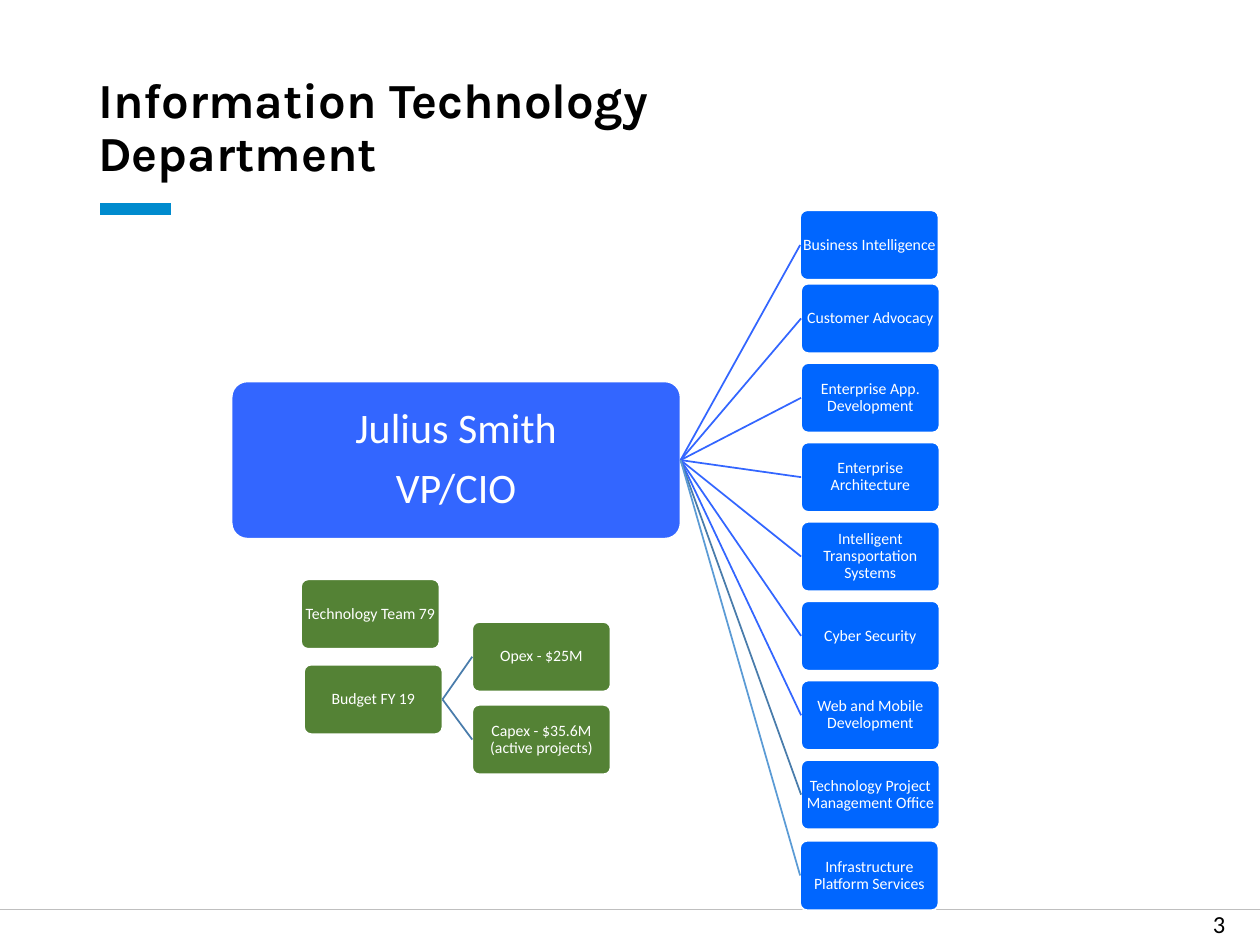
from lxml.etree import SubElement
from pptx import Presentation
from pptx.dml.color import RGBColor
from pptx.enum.shapes import MSO_CONNECTOR, MSO_SHAPE
from pptx.enum.text import MSO_ANCHOR, PP_ALIGN
from pptx.oxml.ns import qn
from pptx.util import Cm, Pt

WHITE = "FFFFFF"
BLACK = "000000"
ROYAL = "3366FF"
BLUE = "0066FF"
GREEN = "548235"
STEEL = "497CAB"
SKY = "5B9BD5"

TOP, LEFT, RIGHT = 0, 1, 3
BOX_WIDTH, BOX_HEIGHT = 2.79, 1.4
TEAM_LEFT, TEAM_TOP, TEAM_PITCH = 16.15, 5.72, 1.6


def color(value):
    return RGBColor.from_string(value)


def format_text(text_frame, text, size, align, font="Calibri", text_color=WHITE,
                bold=False, spacing=0.9):
    text_frame.text = text
    last = len(text_frame.paragraphs) - 1
    for index, paragraph in enumerate(text_frame.paragraphs):
        paragraph.alignment = align
        paragraph.line_spacing = spacing
        if index < last:
            paragraph.space_after = Pt(size * 0.35)
        for run in paragraph.runs:
            run.font.name = font
            run.font.size = Pt(size)
            run.font.bold = bold
            run.font.color.rgb = color(text_color)


def add_box(slide, text, left, top, fill, width=BOX_WIDTH, height=BOX_HEIGHT, size=9):
    shape = slide.shapes.add_shape(
        MSO_SHAPE.ROUNDED_RECTANGLE, Cm(left), Cm(top), Cm(width), Cm(height))
    shape.shadow.inherit = False
    shape.adjustments[0] = 0.1
    shape.fill.solid()
    shape.fill.fore_color.rgb = color(fill)
    shape.line.color.rgb = color(WHITE)
    shape.line.width = Pt(1)
    text_frame = shape.text_frame
    text_frame.word_wrap = True
    text_frame.vertical_anchor = MSO_ANCHOR.MIDDLE
    text_frame.margin_left = text_frame.margin_right = 0
    text_frame.margin_top = text_frame.margin_bottom = 0
    format_text(text_frame, text, size, PP_ALIGN.CENTER)
    return shape


def add_line(slide, start, end, line_color, width=1):
    line = slide.shapes.add_connector(
        MSO_CONNECTOR.STRAIGHT, *(Cm(value) for value in (*start, *end)))
    line.line.color.rgb = color(line_color)
    line.line.width = Pt(width)
    SubElement(line._element.spPr, qn("a:effectLst"))
    return line


def link(slide, parent, child, line_color):
    line = add_line(slide, (0, 0), (0, 0), line_color)
    line.begin_connect(parent, RIGHT)
    line.end_connect(child, LEFT)


def add_label(slide, text, left, top, width, height, size, anchor, **style):
    label = slide.shapes.add_textbox(Cm(left), Cm(top), Cm(width), Cm(height))
    label.text_frame.word_wrap = True
    label.text_frame.vertical_anchor = anchor
    format_text(label.text_frame, text, size, text_color=BLACK, **style)


def add_teams(slide, leader):
    teams = [
        ("Customer Advocacy", ROYAL),
        ("Enterprise App. Development", ROYAL),
        ("Enterprise Architecture", ROYAL),
        ("Intelligent Transportation Systems", ROYAL),
        ("Cyber Security", ROYAL),
        ("Web and Mobile Development", ROYAL),
        ("Technology Project Management Office", STEEL),
    ]
    first = add_box(slide, "Business Intelligence", 16.13, 4.24, BLUE)
    link(slide, leader, first, ROYAL)
    for row, (name, line_color) in enumerate(teams):
        team = add_box(slide, name, TEAM_LEFT, TEAM_TOP + row * TEAM_PITCH, BLUE)
        link(slide, leader, team, line_color)
    last = add_box(slide, "Infrastructure Platform Services", 16.13, 16.95, BLUE)
    link(slide, leader, last, SKY)


def add_budget(slide):
    add_box(slide, "Technology Team 79", 6.07, 11.68, GREEN)
    budget = add_box(slide, "Budget FY\u00a019".replace("\u00a0", " "), 6.13, 13.4, GREEN)
    for text, top in (("Opex - $25M", 12.54), ("Capex - $35.6M (active projects)", 14.21)):
        link(slide, budget, add_box(slide, text, 9.52, top, GREEN), STEEL)


def main():
    presentation = Presentation()
    presentation.slide_width = Cm(25.4)
    presentation.slide_height = Cm(19.05)
    slide = presentation.slides.add_slide(presentation.slide_layouts[6])

    add_line(slide, (0, 18.33), (25.4, 18.33), "BFBFBF", 0.75)
    add_line(slide, (2.02, 4.21), (3.45, 4.21), "008BCE", 6.75)
    add_label(slide, "Information Technology Department", 1.73, 1.12, 16.97, 2.67, 28,
              MSO_ANCHOR.BOTTOM, align=PP_ALIGN.LEFT, font="Karla", bold=True)
    add_label(slide, "3", 24.2, 18.2, 1.1, 0.85, 14,
              MSO_ANCHOR.TOP, align=PP_ALIGN.LEFT, spacing=1.0)

    leader = add_box(slide, "Julius Smith\nVP/CIO", 4.67, 7.69, ROYAL, 9.05, 3.17, 24)
    add_teams(slide, leader)
    add_budget(slide)
    presentation.save("out.pptx")


if __name__ == "__main__":
    main()
